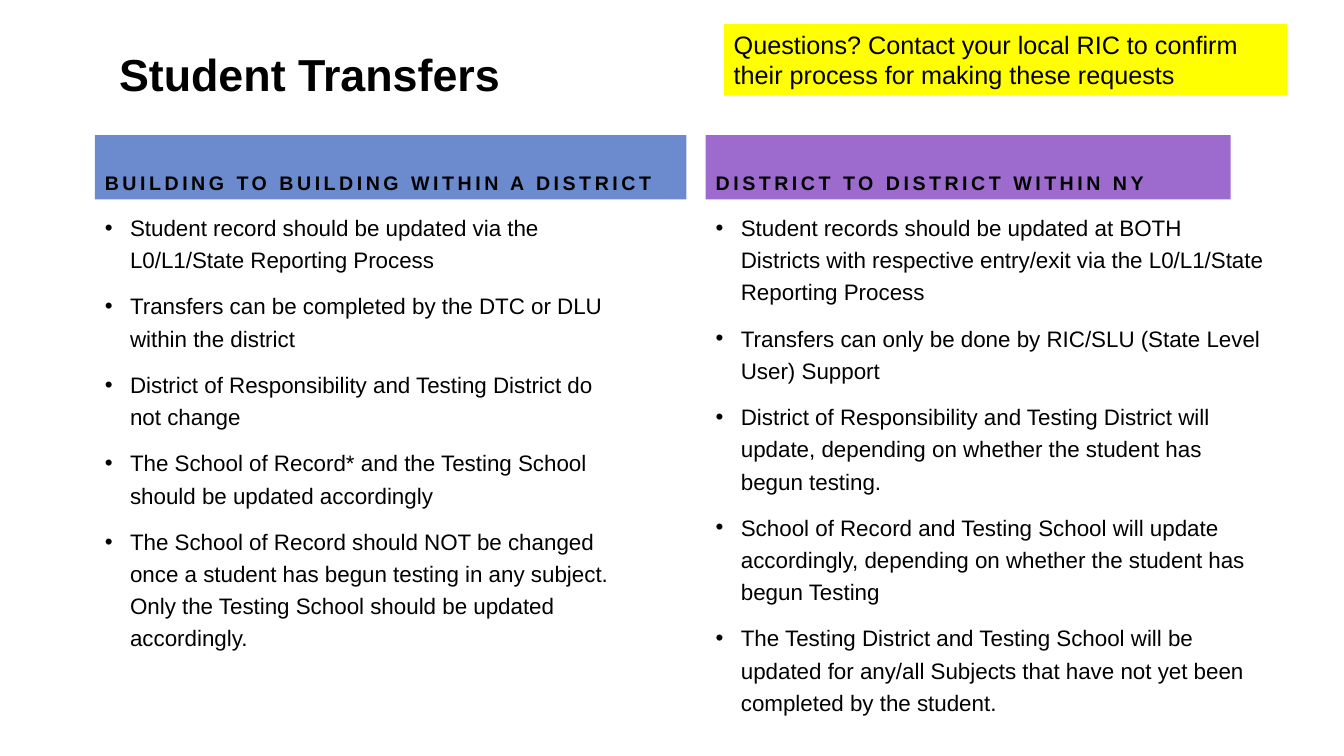
from lxml import etree
from pptx import Presentation
from pptx.dml.color import RGBColor
from pptx.enum.shapes import MSO_SHAPE
from pptx.enum.text import MSO_ANCHOR, MSO_AUTO_SIZE, PP_ALIGN
from pptx.oxml.ns import qn
from pptx.util import Pt

RECT = MSO_SHAPE.RECTANGLE
TOP, BOTTOM = MSO_ANCHOR.TOP, MSO_ANCHOR.BOTTOM
NO_FIT = MSO_AUTO_SIZE.NONE
LEFT = PP_ALIGN.LEFT
FONT = "Arial"
INK = "000000"
HEAD_TOP, HEAD_HIGH = 96.5, 46
LIST_TOP = 145.5

BUILDING = [
    "Student record should be updated via the L0/L1/State Reporting Process",
    "Transfers can be completed by the DTC or DLU within the district",
    "District of Responsibility and Testing District do not change",
    "The School of Record* and the Testing School should be updated accordingly",
    "The School of Record should NOT be changed once a student has begun testing "
    "in any subject. Only the Testing School should be updated accordingly.",
]
DISTRICT = [
    "Student records should be updated at BOTH Districts with respective "
    "entry/exit via the L0/L1/State Reporting Process",
    "Transfers can only be done by RIC/SLU (State Level User) Support",
    "District of Responsibility and Testing District will update, depending on "
    "whether the student has begun testing.",
    "School of Record and Testing School will update accordingly, depending on "
    "whether the student has begun Testing",
    "The Testing District and Testing School will be updated for any/all Subjects "
    "that have not yet been completed by the student.",
]
# Left edge, heading width, list width, list height, fill, heading, items
COLUMNS = [
    (67.7, 422.6, 389.5, 304, "6B8BCE",
     "BUILDING TO BUILDING WITHIN A DISTRICT", BUILDING),
    (504, 375, 406.8, 309, "9D6BCE",
     "DISTRICT TO DISTRICT WITHIN NY", DISTRICT),
]


def color(code):
    return RGBColor.from_string(code)


def place(shape, left, top, width, height):
    shape.left, shape.top = Pt(left), Pt(top)
    shape.width, shape.height = Pt(width), Pt(height)


def paint(shape, code):
    shape.fill.solid()
    shape.fill.fore_color.rgb = color(code)
    shape.line.fill.background()


def add_bullet(para):
    props = para._p.get_or_add_pPr()
    props.set("marL", str(Pt(18)))
    props.set("indent", str(-Pt(18)))
    etree.SubElement(props, qn("a:buFont")).set("typeface", FONT)
    etree.SubElement(props, qn("a:buChar")).set("char", "•")


def write(shape, lines, size, bold=False, anchor=TOP, spacing=1.0,
          before=0, track=0, bullet=False):
    """Fill a shape with one paragraph per line; track is letter spacing."""
    frame = shape.text_frame
    frame.word_wrap = True
    frame.auto_size = NO_FIT
    frame.vertical_anchor = anchor
    for index, line in enumerate(lines):
        para = frame.paragraphs[0] if index == 0 else frame.add_paragraph()
        para.alignment = LEFT
        para.line_spacing = spacing
        para.space_before = Pt(before if index else 0)
        para.space_after = Pt(0)
        if bullet:
            add_bullet(para)
        run = para.add_run()
        run.text = line
        font = run.font
        font.name, font.size, font.bold = FONT, Pt(size), bold
        font.color.rgb = color(INK)
        if track:
            run._r.get_or_add_rPr().set("spc", str(round(track * 100)))


def add_column(head, body, column):
    left, head_wide, list_wide, list_high, fill, title, items = column
    place(head, left, HEAD_TOP, head_wide, HEAD_HIGH)
    paint(head, fill)
    write(head, [title], 14, bold=True, anchor=BOTTOM, spacing=1.2, track=2.5)
    place(body, left, LIST_TOP, list_wide, list_high)
    write(body, items, 16, spacing=1.2, before=10, bullet=True)


def add_note(slide, text):
    note = slide.shapes.add_shape(RECT, Pt(517), Pt(17.3), Pt(402.5), Pt(51))
    note.shadow.inherit = False
    paint(note, "FFFF00")
    write(note, [text], 18)


def main():
    deck = Presentation()
    deck.slide_width, deck.slide_height = Pt(960), Pt(540)
    slide = deck.slides.add_slide(deck.slide_layouts.get_by_name("Comparison"))
    title, *slots = slide.placeholders
    place(title, 77.8, 3.6, 795, 72)
    write(title, ["Student Transfers"], 32, bold=True, anchor=BOTTOM, spacing=0.9)
    for head, body, column in zip(slots[::2], slots[1::2], COLUMNS):
        add_column(head, body, column)
    add_note(slide, "Questions? Contact your local RIC to confirm "
                    "their process for making these requests")
    deck.save("out.pptx")


if __name__ == "__main__":
    main()
